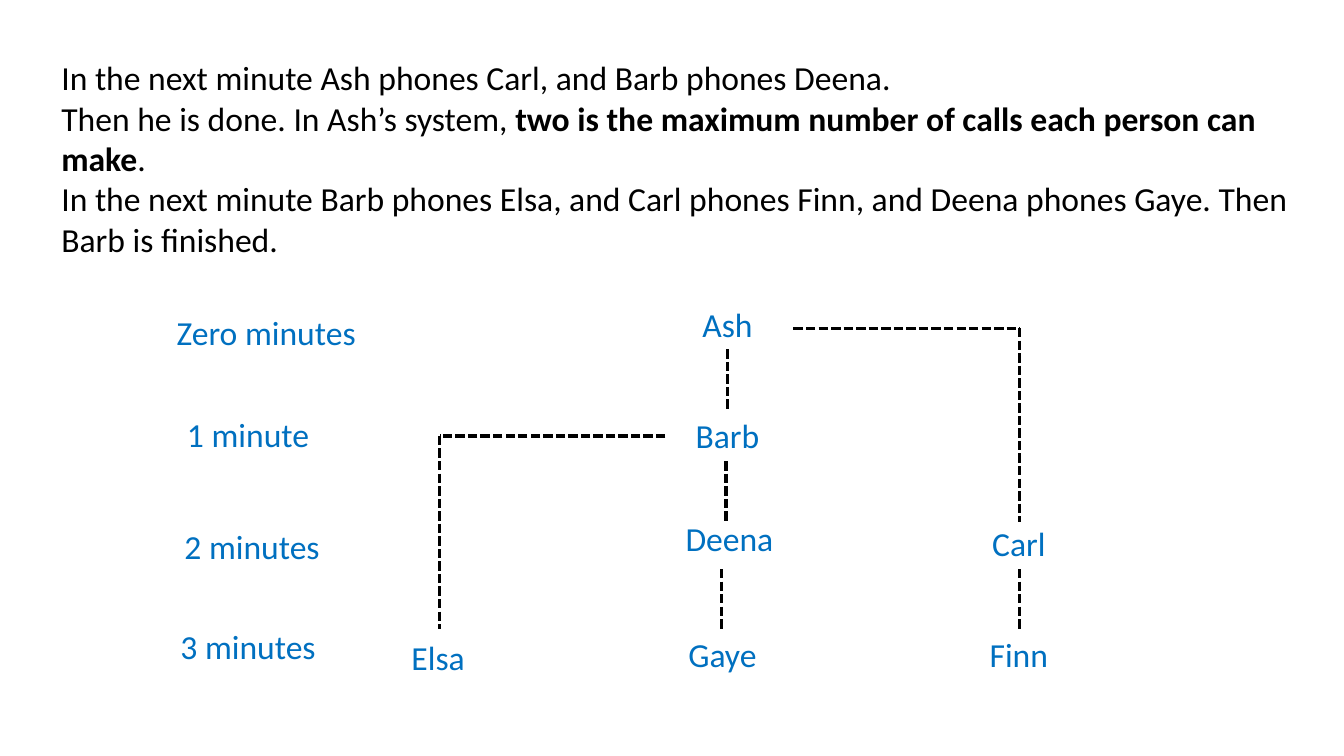
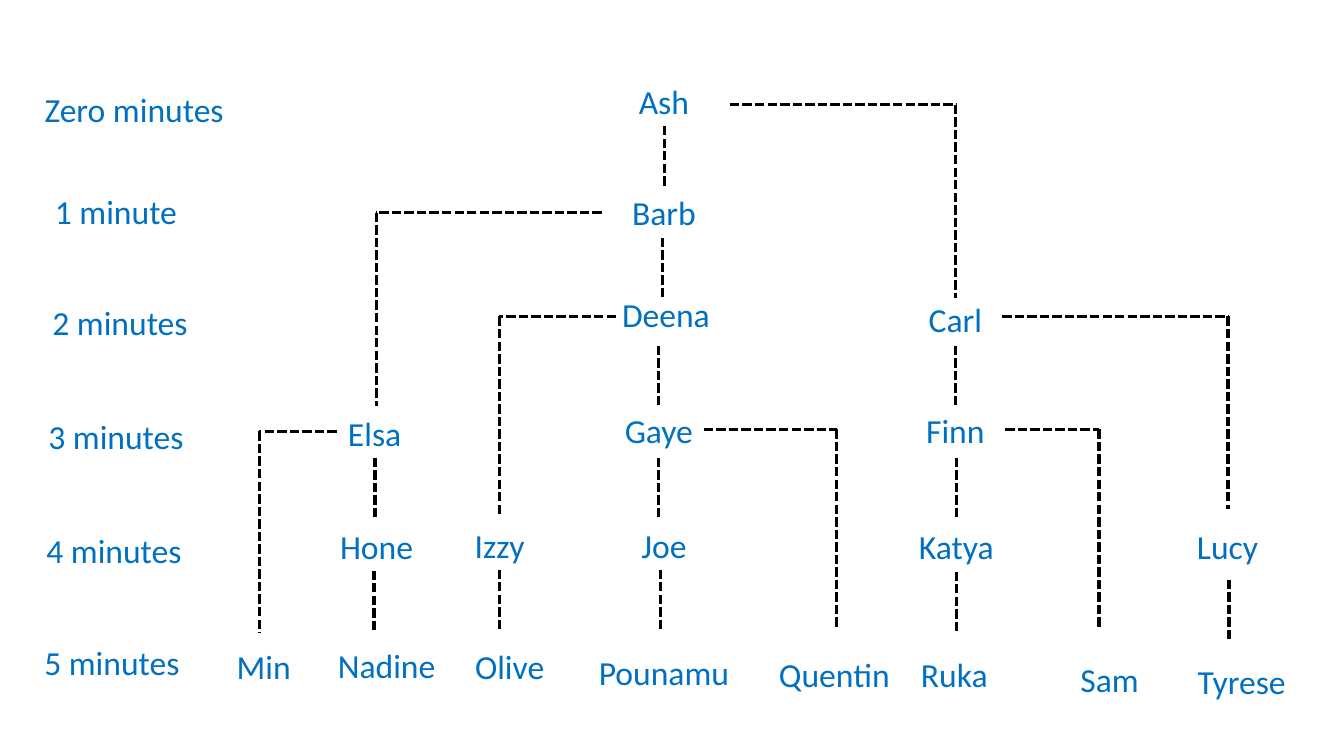
from dataclasses import dataclass

from lxml import etree
from pptx import Presentation
from pptx import util as u
from pptx.dml.color import RGBColor
from pptx.enum import dml, shapes, text
from pptx.oxml import ns


@dataclass(frozen=True)
class Theme:
    font: str = "Calibri"
    size: float = 24
    ink: str = "000000"
    name: str = "0070C0"
    line_width: float = 2.25


@dataclass(frozen=True)
class Label:
    """A name or time, centred on column x in the row of its minute."""
    text: str
    x: float
    minute: int
    dy: float = 0
    width: float = 17.5


@dataclass(frozen=True)
class Stem:
    """A call straight down, from one minute to the next."""
    x: float
    minute: int
    dy: float = 0


@dataclass(frozen=True)
class Elbow:
    """A call that runs sideways, then down to a later minute."""
    x: float
    x_to: float
    y: float
    drop: float
    minute: int


@dataclass(frozen=True)
class View:
    """How many minutes a slide shows and how far its tree is shifted."""
    last: int
    tree_dx: float = 0
    time_dx: float = 0
    dy: float = 0
    last_time_dy: float = 0


THEME = Theme()

# Grid: 75 rows of square cells; each minute takes 11 rows
WIDTH, HEIGHT = u.Inches(13.33), u.Inches(7.5)
CELL = HEIGHT / 75
MINUTE, FIRST_ROW = 11, 7.5
LABEL_H, STEM_H = 5, 6

PEOPLE = [
    Label("Ash", 65.85, 0), Label("Barb", 65.85, 1),
    Label("Deena", 66.05, 2, -0.8), Label("Carl", 94.75, 2, -0.3),
    Label("Elsa", 37.15, 3), Label("Gaye", 65.35, 3, -0.3),
    Label("Finn", 94.75, 3, -0.3),
    Label("Hone", 37.35, 4, 0.2), Label("Izzy", 49.55, 4, 0.1),
    Label("Joe", 65.85, 4, 0.1), Label("Katya", 94.85, 4, 0.2),
    Label("Lucy", 121.75, 4, 0.2),
    Label("Min", 26.15, 5, 1.1), Label("Nadine", 38.35, 5, 1),
    Label("Olive", 50.55, 5, 1.1), Label("Pounamu", 65.85, 5, 1.7),
    Label("Quentin", 82.75, 5, 1.9), Label("Ruka", 94.65, 5, 1.9),
    Label("Sam", 110.05, 5, 2.4), Label("Tyrese", 123.15, 5, 2.6),
]
TIMES = [
    Label("Zero minutes", 13.3, 0, 0.8, 25.8),
    Label("1 minute", 11.5, 1, -0.1, 25.8),
    Label("2 minutes", 11.9, 2, 0, 25.8),
    Label("3 minutes", 11.5, 3, 0.3, 25.8),
    Label("4 minutes", 11.3, 4, 0.6, 25.8),
    Label("5 minutes", 11.1, 5, 0.7, 25.8),
]
STEMS = [
    Stem(65.9, 0), Stem(65.7, 1, 0.1),
    Stem(65.3, 2, -0.2), Stem(94.8, 2, -0.2),
    Stem(37.2, 3, -0.1), Stem(65.3, 3, -0.1), Stem(94.9, 3, -0.1),
    Stem(37.1, 4, 0.1), Stem(49.5, 4), Stem(65.5, 4),
    Stem(94.9, 4, 0.2), Stem(121.9, 4, 1),
]
ELBOWS = [
    Elbow(72.4, 94.8, 10.4, 19.2, 2), Elbow(59.7, 37.3, 21.1, 19.2, 3),
    Elbow(99.4, 121.8, 31.4, 19.1, 4), Elbow(61.1, 49.5, 31.4, 19.9, 4),
    Elbow(33.4, 25.7, 42.8, 20, 5), Elbow(69.8, 83, 42.6, 19.9, 5),
    Elbow(99.7, 109, 42.6, 19.9, 5),
]
INTRO = [
    [("In the next minute Ash phones Carl, and Barb phones Deena.", False)],
    [("Then he is done. In Ash’s system, ", False),
     ("two is the maximum number of calls each person can make", True),
     (".", False)],
    [("In the next minute Barb phones Elsa, and Carl phones Finn, "
      "and Deena phones Gaye. Then Barb is finished.", False)],
]


def cells(n: float) -> u.Emu:
    return u.Emu(round(n * CELL))


def add_run(p, words: str, *, color: str = THEME.ink, bold: bool = False) -> None:
    r = p.add_run()
    r.text = words
    r.font.name, r.font.size, r.font.bold = THEME.font, u.Pt(THEME.size), bold
    r.font.color.rgb = RGBColor.from_string(color)


def add_box(s, x: float, y: float, w: float, h: float):
    sp = s.shapes.add_textbox(*map(cells, (x, y, w, h)))
    tf = sp.text_frame
    tf.word_wrap = True
    tf.auto_size = text.MSO_AUTO_SIZE.SHAPE_TO_FIT_TEXT
    return tf


def add_label(s, label: Label, dx: float, dy: float) -> None:
    y = FIRST_ROW + label.minute * MINUTE + label.dy + dy
    tf = add_box(s, label.x - label.width / 2 + dx, y, label.width, LABEL_H)
    p = tf.paragraphs[0]
    p.alignment = text.PP_ALIGN.CENTER
    add_run(p, label.text, color=THEME.name)


def add_line(s, x1: float, y1: float, x2: float, y2: float) -> None:
    sp = s.shapes.add_connector(shapes.MSO_CONNECTOR.STRAIGHT,
                                *map(cells, (x1, y1, x2, y2)))
    sp.line.color.rgb = RGBColor.from_string(THEME.ink)
    sp.line.width = u.Pt(THEME.line_width)
    sp.line.dash_style = dml.MSO_LINE.SQUARE_DOT
    etree.SubElement(sp._element.spPr, ns.qn("a:effectLst"))


def add_tree(s, v: View) -> None:
    # Calls
    for stem in STEMS:
        if stem.minute < v.last:
            x = stem.x + v.tree_dx
            y = FIRST_ROW + LABEL_H + stem.minute * MINUTE + stem.dy + v.dy
            add_line(s, x, y, x, y + STEM_H)
    for bend in ELBOWS:
        if bend.minute <= v.last:
            x, y = bend.x_to + v.tree_dx, bend.y + v.dy
            add_line(s, x, y, x, y + bend.drop)
            add_line(s, bend.x + v.tree_dx, y, x, y)
    # People and times
    for person in PEOPLE:
        if person.minute <= v.last:
            add_label(s, person, v.tree_dx, v.dy)
    for time in TIMES[:v.last + 1]:
        nudge = v.last_time_dy if time.minute == v.last else 0
        add_label(s, time, v.time_dx, v.dy + nudge)


def add_intro(s) -> None:
    tf = add_box(s, 5.1, 5.2, 124.8, 21.2)
    for i, runs in enumerate(INTRO):
        p = tf.add_paragraph() if i else tf.paragraphs[0]
        for words, bold in runs:
            add_run(p, words, bold=bold)


def main() -> None:
    prs = Presentation()
    prs.slide_width, prs.slide_height = WIDTH, HEIGHT
    blank = prs.slide_layouts[6]

    # First three minutes, with the explanation above
    s = prs.slides.add_slide(blank)
    add_intro(s)
    add_tree(s, View(last=3, tree_dx=6.3, time_dx=13.1, dy=22.15,
                     last_time_dy=-1.3))

    # All five minutes
    s = prs.slides.add_slide(blank)
    add_tree(s, View(last=5))

    prs.save("out.pptx")


if __name__ == "__main__":
    main()
